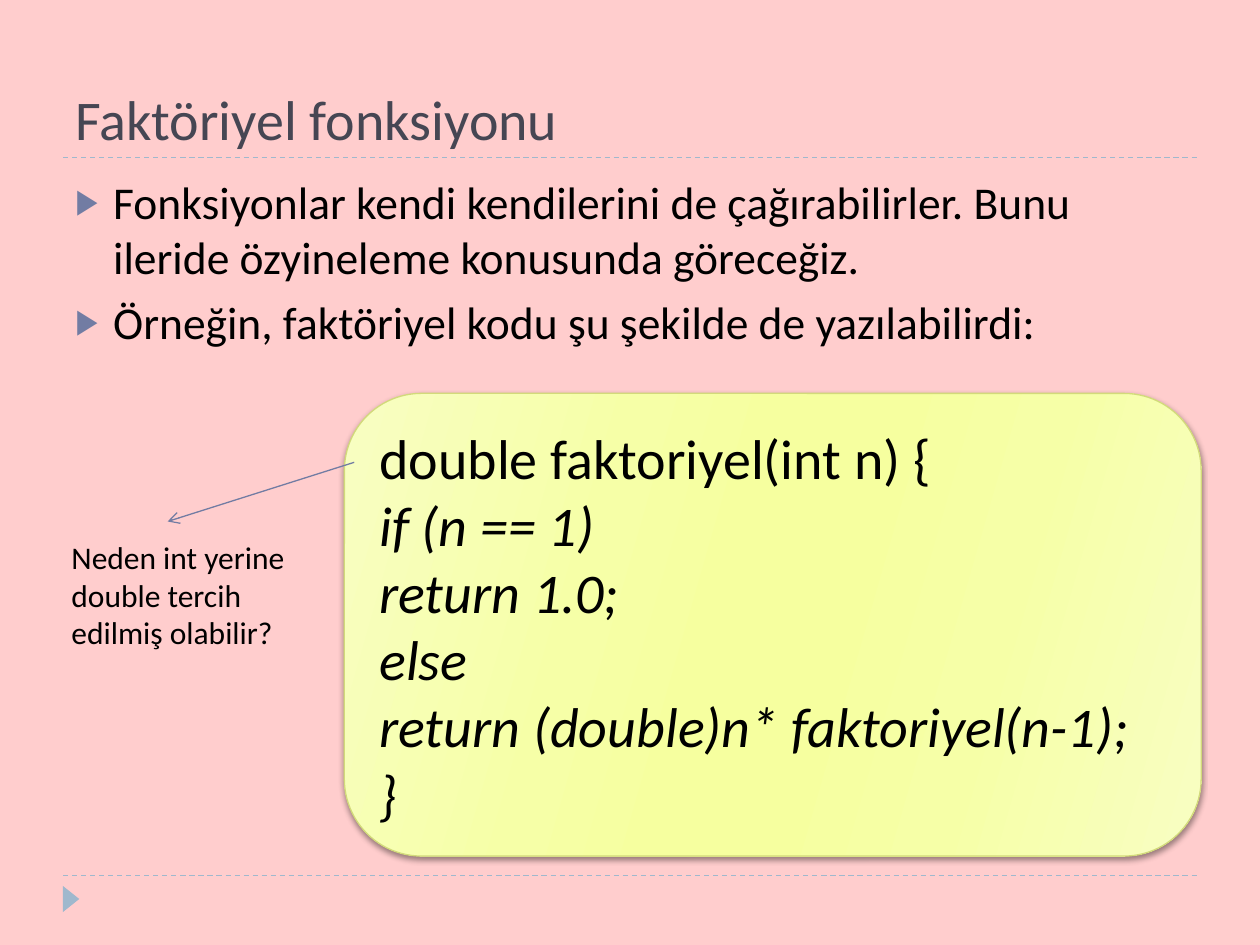
from lxml.etree import SubElement
from pptx import Presentation
from pptx.dml.color import RGBColor
from pptx.enum.dml import MSO_LINE as Dash
from pptx.enum.shapes import MSO_CONNECTOR as Link, MSO_SHAPE as Kind
from pptx.enum.text import MSO_ANCHOR as Anchor, PP_ALIGN as Align
from pptx.oxml import parse_xml
from pptx.oxml.ns import nsdecls, qn
from pptx.util import Pt

TITLE = "Faktöriyel fonksiyonu"
POINTS = [
    "Fonksiyonlar kendi kendilerini de çağırabilirler. Bunu ileride özyineleme konusunda göreceğiz.",
    "Örneğin, faktöriyel kodu şu şekilde de yazılabilirdi:",
]
CODE = [
    "double faktoriyel(int n) {",
    "if (n == 1)",
    "return 1.0;",
    "else",
    "return (double)n* faktoriyel(n-1);",
    "}",
]
NOTE = "Neden int yerine double tercih edilmiş olabilir?"
FADE = [(0, "F8FEC2"), (30, "F6FFA7"), (45, "F6FF9F"),
        (55, "F6FF9F"), (73, "F6FFA7"), (100, "F8FEC2")]
RULES = [90, 500.4]
PALE, BLUE, BLACK = "9FB8CD", "727CA3", "000000"


def color(code):
    return RGBColor.from_string(code)


def write(shape, lines, size, ink=BLACK, anchor=Anchor.TOP):
    frame = shape.text_frame
    frame.word_wrap = True
    frame.vertical_anchor = anchor
    frame.text = "\n".join(lines)
    for para in frame.paragraphs:
        para.alignment = Align.LEFT
        font = para.runs[0].font
        font.name, font.size = "Calibri", Pt(size)
        font.color.rgb = color(ink)
    return frame.paragraphs


def add_text(box, *args, **opts):
    return write(shapes.add_textbox(*map(Pt, box)), *args, **opts)


def add_line(ends, ink):
    line = shapes.add_connector(Link.STRAIGHT, *map(Pt, ends))
    line.line.color.rgb = color(ink)
    line.line.width = Pt(0.75)
    SubElement(line._element.spPr, qn("a:effectLst"))
    return line


def add_bullet(para, indent):
    props = para._p.get_or_add_pPr()
    props.set("marL", str(Pt(indent)))
    props.set("indent", str(-Pt(indent)))
    tint = SubElement(props, qn("a:buClr"))
    SubElement(tint, qn("a:srgbClr"), val=BLUE)
    SubElement(props, qn("a:buSzPct"), val="76000")
    SubElement(props, qn("a:buFont"), typeface="Arial")
    SubElement(props, qn("a:buChar"), char="▶")


def fade_fill(shape, stops, angle):
    """Put a linear gradient right after the shape's geometry."""
    marks = "".join(f'<a:gs pos="{at * 1000}"><a:srgbClr val="{code}"/></a:gs>'
                    for at, code in stops)
    shape._element.spPr.find(qn("a:prstGeom")).addnext(parse_xml(
        f'<a:gradFill {nsdecls("a")} rotWithShape="1"><a:gsLst>{marks}</a:gsLst>'
        f'<a:lin ang="{angle * 60000}" scaled="0"/></a:gradFill>'))


def add_shadow(shape, blur, dist, alpha):
    shape.shadow.inherit = False
    shape._element.spPr.find(qn("a:effectLst")).append(parse_xml(
        f'<a:outerShdw {nsdecls("a")} blurRad="{Pt(blur)}" dist="{Pt(dist)}"'
        f' dir="5400000" rotWithShape="0"><a:srgbClr val="{BLACK}">'
        f'<a:alpha val="{alpha * 1000}"/></a:srgbClr></a:outerShdw>'))


deck = Presentation()
deck.slide_width, deck.slide_height = Pt(720), Pt(540)
slide = deck.slides.add_slide(deck.slide_layouts[6])
shapes = slide.shapes
slide.background.fill.solid()
slide.background.fill.fore_color.rgb = color("FFCDCD")

for y in RULES:
    add_line((36, y, 684, y), PALE).line.dash_style = Dash.DASH

mark = shapes.add_shape(Kind.ISOSCELES_TRIANGLE, Pt(33.1), Pt(509), Pt(15), Pt(9.4))
mark.rotation = 90
mark.shadow.inherit = False
mark.fill.solid()
mark.fill.fore_color.rgb = color(PALE)
mark.line.fill.background()

add_text((36, 12.2, 648, 77.8), [TITLE], 32, ink="464653", anchor=Anchor.BOTTOM)
for para in add_text((36, 96, 648, 389), POINTS, 26):
    para.space_before = Pt(6)
    add_bullet(para, 21.6)

panel = shapes.add_shape(Kind.ROUNDED_RECTANGLE, Pt(196.8), Pt(224.8), Pt(489.6), Pt(264.4))
panel.line.color.rgb = color("D2DA7A")
panel.line.width = Pt(0.75)
fade_fill(panel, FADE, 16)
add_shadow(panel, 3, 2, 40)
for para in write(panel, CODE, 32, anchor=Anchor.MIDDLE)[1:]:
    para.runs[0].font.italic = True

arrow = add_line((202.4, 264.2, 95.8, 298), BLUE)
SubElement(arrow.line._get_or_add_ln(), qn("a:tailEnd"), type="arrow")
add_text((33.8, 303.8, 157.5, 72.7), [NOTE], 18)

deck.save("out.pptx")
